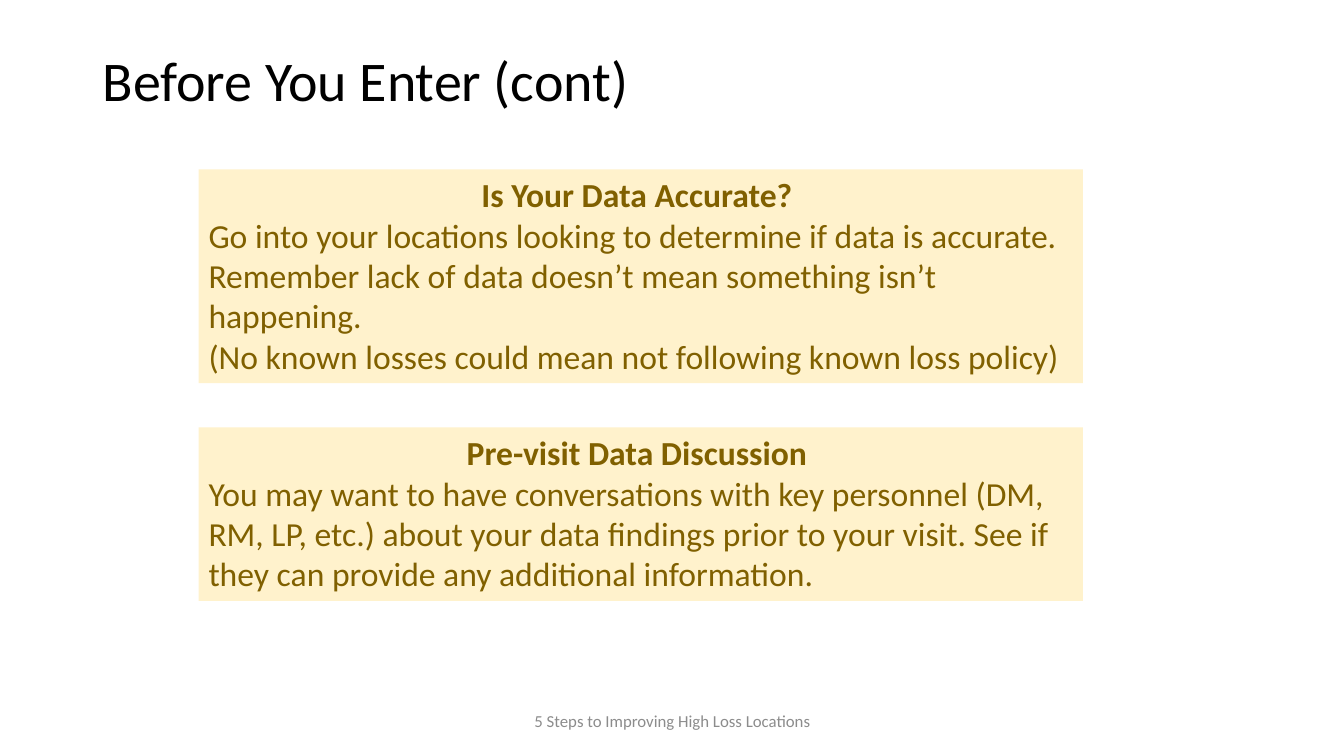
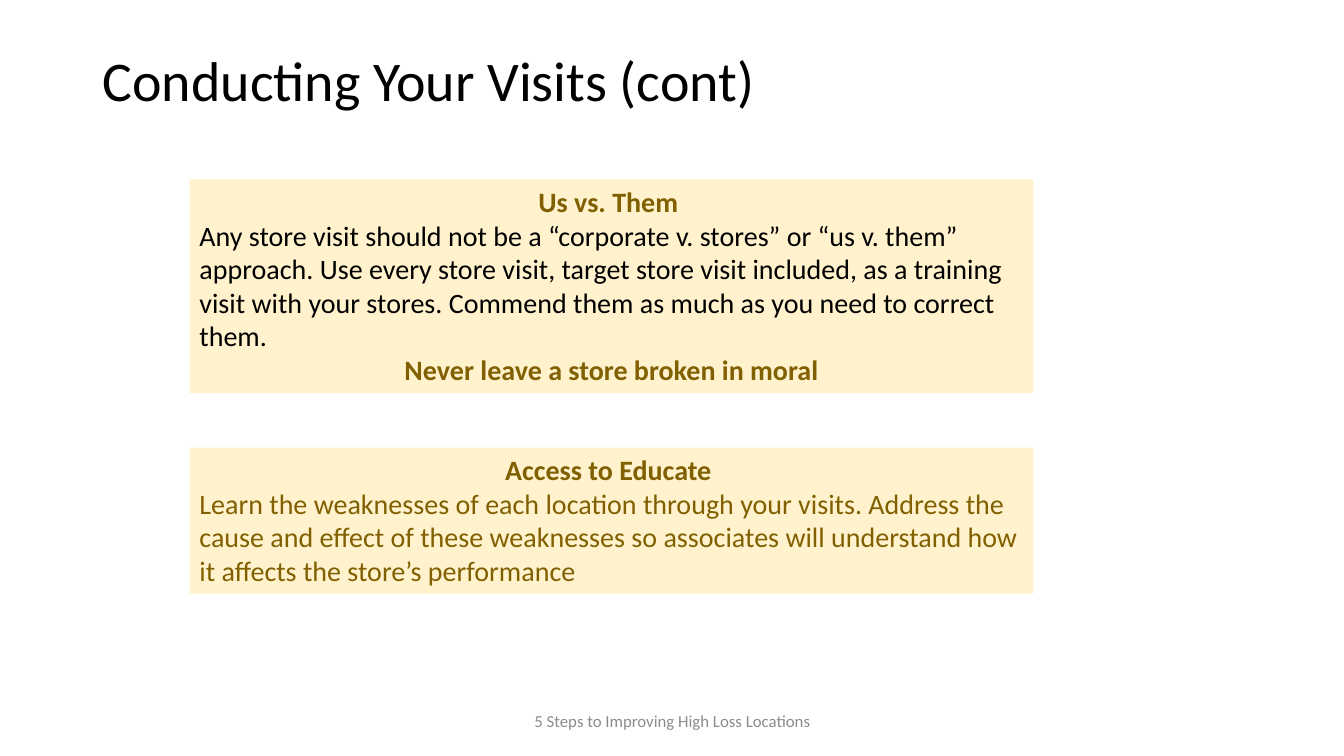
from dataclasses import dataclass

from pptx import Presentation
from pptx.dml.color import RGBColor
from pptx.enum.shapes import MSO_SHAPE
from pptx.enum.text import MSO_ANCHOR, PP_ALIGN
from pptx.util import Emu, Pt

EMU_PER_PX = 9144  # 100 px to the inch


@dataclass(frozen=True)
class Theme:
    font: str = "Calibri"
    ink: str = "000000"
    accent: str = "806000"
    panel: str = "FFF2CC"
    muted: str = "8C8C8C"
    title_size: int = 40
    footer_size: int = 12


def px(length):
    return Emu(length * EMU_PER_PX)


def add_text(frame, text, *, size, color, font, bold=False,
             align=PP_ALIGN.LEFT, line_spacing=None):
    """Fill the frame's first paragraph, or add one if it is taken."""
    para = frame.paragraphs[0]
    if para.runs:
        para = frame.add_paragraph()
    para.alignment = align
    if line_spacing:
        para.line_spacing = line_spacing
    span = para.add_run()
    span.text = text
    span.font.name = font
    span.font.size = Pt(size)
    span.font.bold = bold
    span.font.color.rgb = RGBColor.from_string(color)


class DeckBuilder:
    FOOTER = "5 Steps to Improving High Loss Locations"

    def __init__(self, theme):
        self.theme = theme
        self.deck = Presentation()
        self.deck.slide_width, self.deck.slide_height = px(1333), px(750)
        self.page = None

    def add_page(self, title):
        self.page = self.deck.slides.add_slide(self.deck.slide_layouts[6])
        theme = self.theme
        self.label(title, 92, 40, 1150, 85, size=theme.title_size,
                   color=theme.ink, line_spacing=0.9)
        self.label(self.FOOTER, 442, 695, 450, 40, size=theme.footer_size,
                   color=theme.muted, align=PP_ALIGN.CENTER)

    def label(self, text, left, top, width, height, **style):
        box = self.page.shapes.add_textbox(px(left), px(top), px(width), px(height))
        frame = box.text_frame
        frame.word_wrap = True
        frame.vertical_anchor = MSO_ANCHOR.MIDDLE
        add_text(frame, text, font=self.theme.font, **style)

    def panel(self, left, top, width, height, heading, body, *, size,
              body_color=None, closing=None):
        """Draw a tinted box: centred heading, body lines, optional centred closing."""
        theme = self.theme
        box = self.page.shapes.add_shape(
            MSO_SHAPE.RECTANGLE, px(left), px(top), px(width), px(height))
        box.shadow.inherit = False
        box.fill.solid()
        box.fill.fore_color.rgb = RGBColor.from_string(theme.panel)
        box.line.fill.background()
        frame = box.text_frame
        frame.word_wrap = True
        frame.vertical_anchor = MSO_ANCHOR.TOP

        strong = dict(size=size, color=theme.accent, font=theme.font,
                      bold=True, align=PP_ALIGN.CENTER)
        add_text(frame, heading, **strong)
        for text in body:
            add_text(frame, text, size=size, color=body_color or theme.accent,
                     font=theme.font)
        if closing:
            add_text(frame, closing, **strong)


def main():
    theme = Theme()
    builder = DeckBuilder(theme)

    builder.add_page("Before You Enter (cont)")
    builder.panel(
        197, 168, 877, 212, "Is Your Data Accurate? ",
        ["Go into your locations looking to determine if data is accurate. "
         "Remember lack of data doesn’t mean something isn’t happening.",
         "(No known losses could mean not following known loss policy)"],
        size=24)
    builder.panel(
        197, 424, 877, 172, "Pre-visit Data Discussion ",
        ["You may want to have conversations with key personnel (DM, RM, LP, etc.) "
         "about your data findings prior to your visit. "
         "See if they can provide any additional information."],
        size=24)

    builder.add_page("Conducting Your Visits (cont)")
    builder.panel(
        188, 178, 837, 212, "Us vs. Them ",
        ["Any store visit should not be a “corporate v. stores” or “us v. them” "
         "approach. Use every store visit, target store visit included, as a "
         "training visit with your stores. Commend them as much as you need to "
         "correct them."],
        size=20, body_color=theme.ink,
        closing="Never leave a store broken in moral")
    builder.panel(
        188, 444, 837, 145, "Access to Educate ",
        ["Learn the weaknesses of each location through your visits. Address the "
         "cause and effect of these weaknesses so associates will understand how "
         "it affects the store’s performance"],
        size=20)

    builder.deck.save("out.pptx")


if __name__ == "__main__":
    main()
